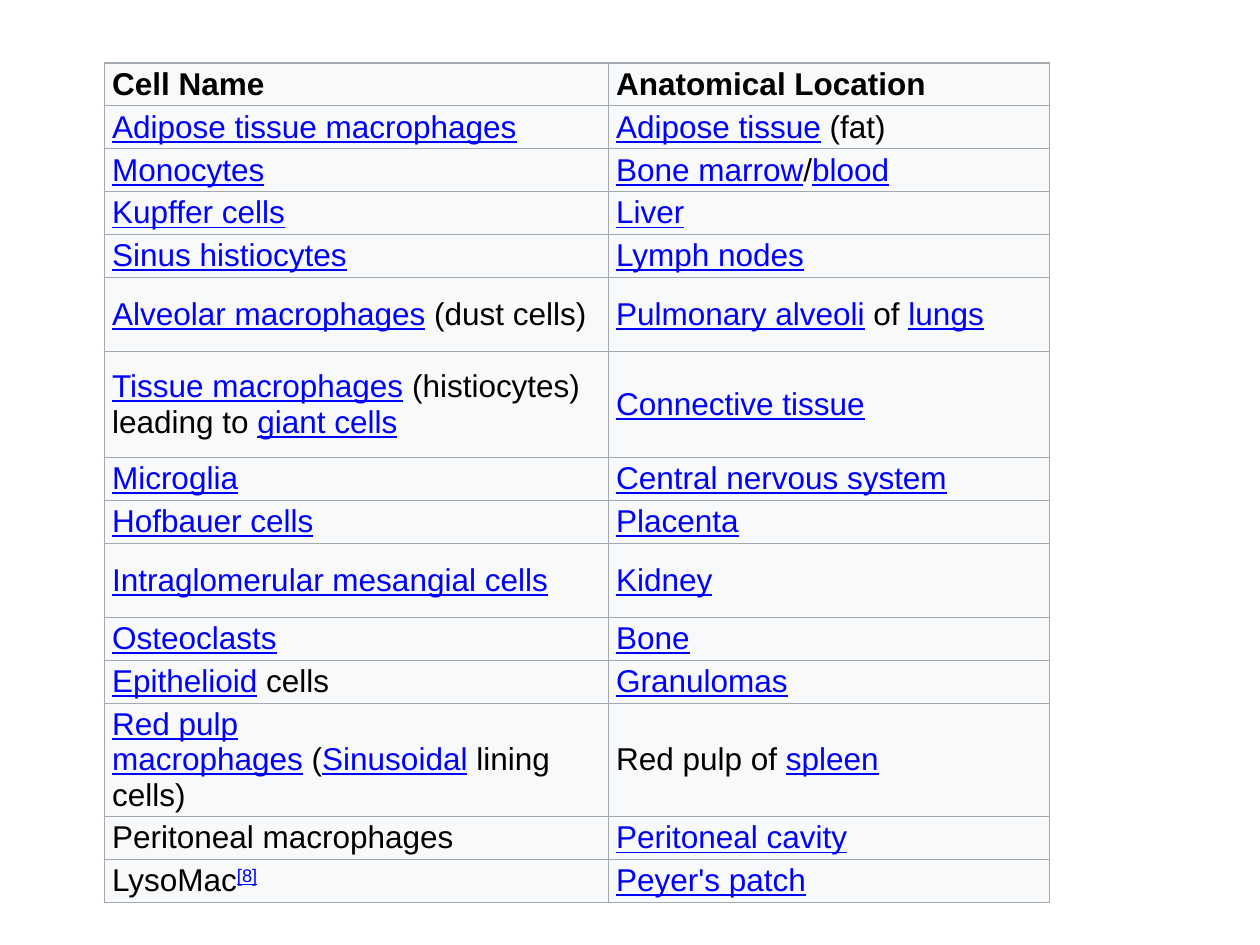
import pptx
import pptx.dml.color
import pptx.enum.text
import pptx.oxml
import pptx.oxml.ns
import pptx.util
from pptx.util import Inches

# Markup: *linked text*, ^ starts a superscript link, ~ is a no-break space.
ROWS = [
    (0.34, "Cell Name", "Anatomical Location"),
    (0.34, "*Adipose tissue macrophages*", "*Adipose tissue*~(fat)"),
    (0.34, "*Monocytes*", "*Bone marrow*/*blood*"),
    (0.34, "*Kupffer cells*", "*Liver*"),
    (0.34, "*Sinus histiocytes*", "*Lymph nodes*"),
    (0.59, "*Alveolar macrophages*~(dust cells)", "*Pulmonary alveoli*~of~*lungs*"),
    (0.84, "*Tissue macrophages*~(histiocytes) leading to~*giant cells*",
     "*Connective tissue*"),
    (0.34, "*Microglia*", "*Central nervous system*"),
    (0.34, "*Hofbauer cells*", "*Placenta*"),
    (0.59, "*Intraglomerular mesangial cells*", "*Kidney*"),
    (0.34, "*Osteoclasts*", "*Bone*"),
    (0.34, "*Epithelioid*~cells", "*Granulomas*"),
    (0.84, "*Red pulp macrophages*~(*Sinusoidal*~lining cells)", "Red pulp of~*spleen*"),
    (0.34, "Peritoneal macrophages", "*Peritoneal cavity*"),
    (0.34, "LysoMac*^[8]*", "*Peyer's patch*"),
]
COL_WIDTHS = (4, 3.5)


def rgb(color):
    return pptx.dml.color.RGBColor.from_string(color)


class SlideBuilder:
    font, size = "Arial", 18
    text, link = "000000", "0000FF"
    cell_fill, border, border_width = "F8F9FA", "A2A9B1", 0.75

    def __init__(self, prs):
        self.s = prs.slides.add_slide(prs.slide_layouts[6])

    def table(self, left, top, widths, rows):
        height = sum(row[0] for row in rows)
        tbl = self.s.shapes.add_table(len(rows), len(widths), Inches(left), Inches(top),
                                      Inches(sum(widths)), Inches(height)).table
        tbl.first_row = tbl.horz_banding = False
        for col, width in zip(tbl.columns, widths):
            col.width = Inches(width)
        for i, (row_height, *texts) in enumerate(rows):
            tbl.rows[i].height = Inches(row_height)
            for j, text in enumerate(texts):
                self.cell(tbl.cell(i, j), text, bold=i == 0)

    def cell(self, cell, text, bold):
        cell.margin_left = cell.margin_right = Inches(0.06)
        cell.margin_top = cell.margin_bottom = Inches(0.03)
        cell.vertical_anchor = pptx.enum.text.MSO_ANCHOR.MIDDLE
        self.borders(cell)
        cell.fill.solid()
        cell.fill.fore_color.rgb = rgb(self.cell_fill)
        p = cell.text_frame.paragraphs[0]
        for k, part in enumerate(text.replace("~", chr(160)).split("*")):
            if part:
                self.run(p, part, bold, linked=k % 2 == 1)

    def run(self, p, text, bold, linked):
        r = p.add_run()
        r.text = text.lstrip("^")
        r.font.name, r.font.size = self.font, pptx.util.Pt(self.size)
        r.font.bold, r.font.underline = bold, linked
        r.font.color.rgb = rgb(self.link if linked else self.text)
        if text.startswith("^"):
            r.font._element.set("baseline", "30000")

    def borders(self, cell):
        """Draw all four edges; must run before the fill, which follows them in the XML."""
        tc_pr = cell._tc.get_or_add_tcPr()
        for i, side in enumerate(("lnL", "lnR", "lnT", "lnB")):
            tc_pr.insert(i, pptx.oxml.parse_xml(
                f'<a:{side} {pptx.oxml.ns.nsdecls("a")} w="{pptx.util.Pt(self.border_width)}">'
                f'<a:solidFill><a:srgbClr val="{self.border}"/></a:solidFill></a:{side}>'))


def main():
    prs = pptx.Presentation()
    prs.slide_width, prs.slide_height = Inches(10), Inches(7.5)
    SlideBuilder(prs).table(0.83, 0.5, COL_WIDTHS, ROWS)
    prs.save("out.pptx")


if __name__ == "__main__":
    main()
